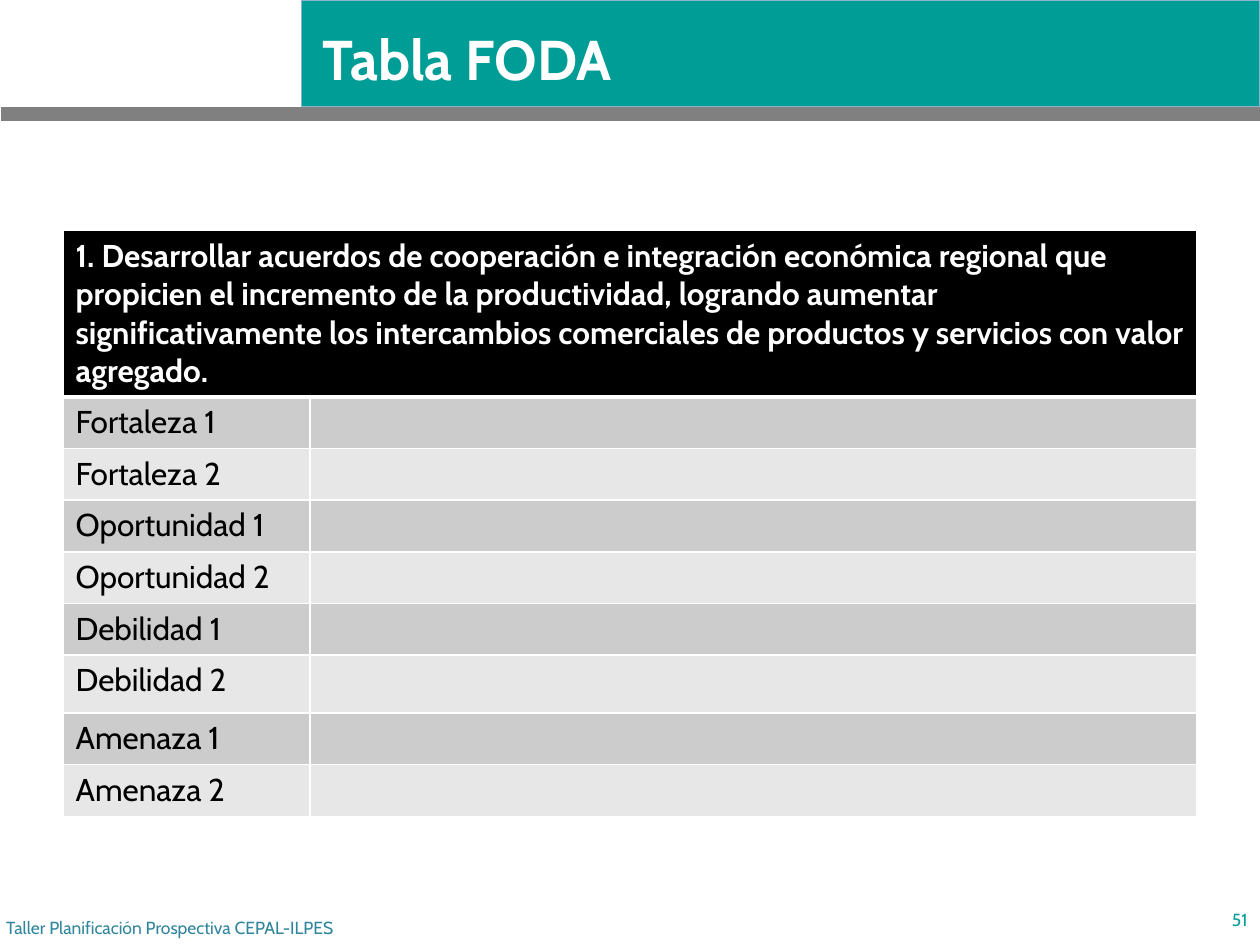
from lxml import etree
from pptx import Presentation
from pptx import util as u
from pptx.dml import color
from pptx.enum import shapes, text
from pptx.oxml import ns

TEAL, GREY, WHITE, BLACK = "009D96", "808080", "FFFFFF", "000000"
BANDS = ("CCCCCC", "E7E7E7")
OBJECTIVE = (
    "1. Desarrollar acuerdos de cooperación e integración económica regional "
    "que propicien el incremento de la productividad, logrando aumentar "
    "significativamente los intercambios comerciales de productos y servicios "
    "con valor agregado."
)
FACTORS = ("Fortaleza", "Oportunidad", "Debilidad", "Amenaza")


def rgb(value):
    return color.RGBColor.from_string(value)


class Deck:
    def __init__(self, width, height, font):
        self.font = font
        self.prs = Presentation()
        self.prs.slide_width = u.Inches(width)
        self.prs.slide_height = u.Inches(height)
        self.s = self.prs.slides.add_slide(self.prs.slide_layouts[6])

    def add_text(self, tf, content, hue, size, bold=False, align=text.PP_ALIGN.LEFT):
        p = tf.paragraphs[0]
        p.alignment = align
        r = p.add_run()
        r.text = content
        formats = {"name": self.font, "size": u.Pt(size), "bold": bold}
        for name, value in formats.items():
            setattr(r.font, name, value)
        r.font.color.rgb = rgb(hue)

    def bar(self, box, fill, line=None):
        sp = self.s.shapes.add_shape(
            shapes.MSO_SHAPE.RECTANGLE, *map(u.Inches, box))
        sp.shadow.inherit = False
        sp.fill.solid()
        sp.fill.fore_color.rgb = rgb(fill)
        if line:
            sp.line.color.rgb = rgb(line)
            sp.line.width = u.Pt(0.75)
        else:
            sp.line.fill.background()

    def label(self, box, content, hue, size, **style):
        tf = self.s.shapes.add_textbox(*map(u.Inches, box)).text_frame
        tf.word_wrap = True
        tf.vertical_anchor = text.MSO_ANCHOR.MIDDLE
        self.add_text(tf, content, hue, size, **style)

    def style_cell(self, cell, fill, top=1, bottom=1):
        """Border the cell in white, widths in points, then fill it."""
        tc_pr = cell._tc.get_or_add_tcPr()
        for side, width in {"L": 1, "R": 1, "T": top, "B": bottom}.items():
            ln = etree.SubElement(tc_pr, ns.qn(f"a:ln{side}"), w=str(u.Pt(width)))
            solid = etree.SubElement(ln, ns.qn("a:solidFill"))
            etree.SubElement(solid, ns.qn("a:srgbClr"), val=WHITE)
        cell.fill.solid()
        cell.fill.fore_color.rgb = rgb(fill)

    def table(self, left, top, widths, heights, heading, labels):
        """Draw a merged heading row over banded rows with empty answer cells."""
        box = (left, top, sum(widths), sum(heights))
        table = self.s.shapes.add_table(
            len(heights), len(widths), *map(u.Inches, box)).table
        for column, width in zip(table.columns, widths):
            column.width = u.Inches(width)
        for row, height in zip(table.rows, heights):
            row.height = u.Inches(height)
        table.cell(0, 0).merge(table.cell(0, len(widths) - 1))
        for cell in table.rows[0].cells:
            self.style_cell(cell, BLACK, bottom=3)
        self.add_text(table.cell(0, 0).text_frame, heading, WHITE, 18, bold=True)
        for i, name in enumerate(labels, 1):
            for cell in table.rows[i].cells:
                self.style_cell(cell, BANDS[(i - 1) % 2], top=3 if i == 1 else 1)
            self.add_text(table.cell(i, 0).text_frame, name, BLACK, 18)


def main():
    deck = Deck(10, 7.5, "Cabin")
    deck.bar((2.39, 0, 7.61, 0.85), TEAL, line="8FB2CF")
    deck.bar((0.01, 0.85, 10, 0.11), GREY)
    deck.label((2.46, -0.04, 7.41, 1), "Tabla FODA", WHITE, 32, bold=True)

    labels = [f"{factor} {n}" for factor in FACTORS for n in (1, 2)]
    heights = [1.32] + [0.46 if name == "Debilidad 2" else 0.41 for name in labels]
    deck.table(0.5, 1.83, (1.96, 7.04), heights, OBJECTIVE, labels)

    deck.label((-0.05, 7.16, 5.98, 0.4),
               "Taller Planificación Prospectiva CEPAL-ILPES", "31859C", 10)
    deck.label((9.5, 7.1, 0.5, 0.4), "51", TEAL, 10, align=text.PP_ALIGN.RIGHT)
    deck.prs.save("out.pptx")


if __name__ == "__main__":
    main()
